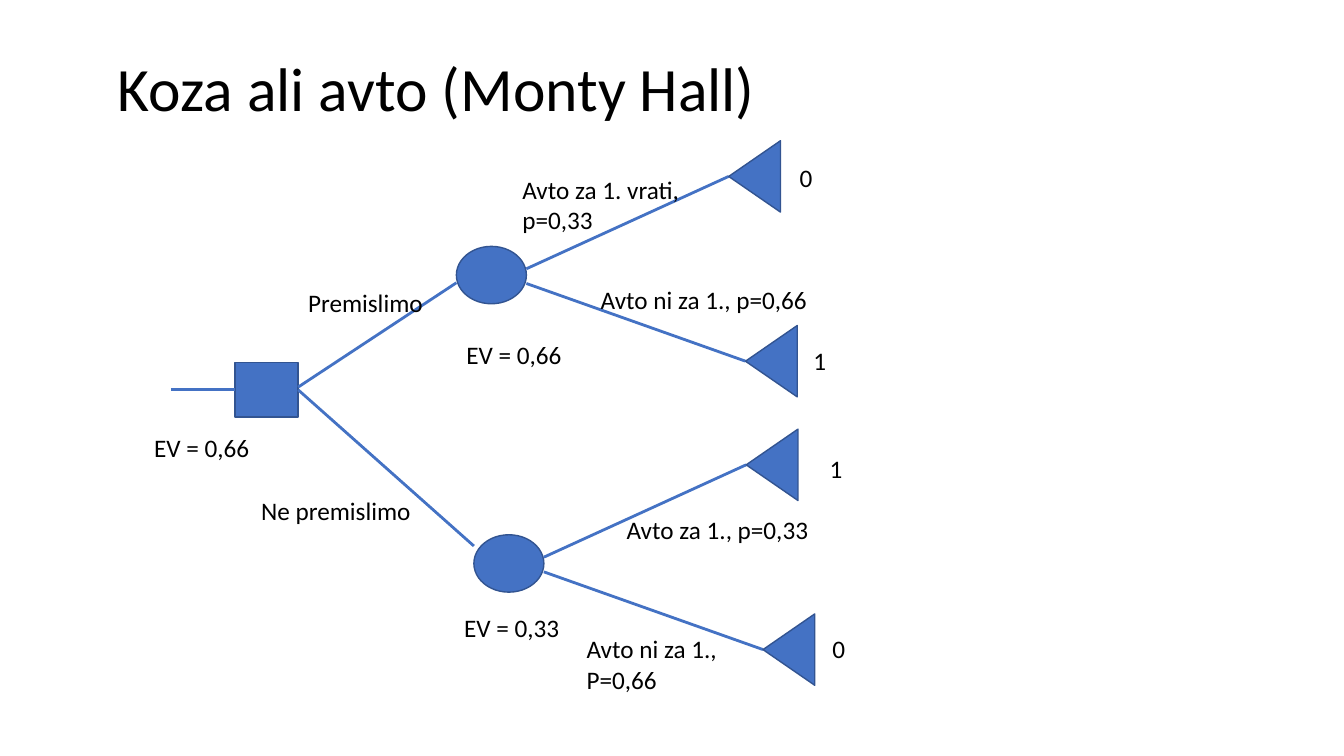
from pptx import Presentation
from pptx.dml.color import RGBColor
from pptx.enum.shapes import MSO_CONNECTOR, MSO_SHAPE
from pptx.enum.text import MSO_ANCHOR, MSO_AUTO_SIZE, PP_ALIGN
from pptx.oxml.ns import qn
from pptx.util import Pt
from lxml import etree

BLUE = RGBColor(0x44, 0x72, 0xC4)
DARK_BLUE = RGBColor(0x32, 0x54, 0x91)
BLACK = RGBColor(0, 0, 0)
STRAIGHT = MSO_CONNECTOR.STRAIGHT
RECT, OVAL, TRIANGLE = MSO_SHAPE.RECTANGLE, MSO_SHAPE.OVAL, MSO_SHAPE.ISOSCELES_TRIANGLE
LEFT, MIDDLE = PP_ALIGN.LEFT, MSO_ANCHOR.MIDDLE
FIT_SHAPE, NO_FIT = MSO_AUTO_SIZE.SHAPE_TO_FIT_TEXT, MSO_AUTO_SIZE.NONE

LEFT_SIDE, RIGHT_SIDE = 1, 3
CHANCE_W, CHANCE_H = 50, 41
PAYOFF_BASE, PAYOFF_H = 51, 37
# Start and end of both outcome branches, relative to the chance node
OUTCOME_LINES = [((50, 16), (194.5, -50)), ((50, 26.5), (206.5, 82))]


def format_font(p, size):
    for name, value in {"name": "Calibri", "size": Pt(size)}.items():
        setattr(p.font, name, value)
    p.font.color.rgb = BLACK


def add_title(s, text, x, y, w, h):
    title = s.shapes.title
    for name, value in {"left": x, "top": y, "width": w, "height": h}.items():
        setattr(title, name, Pt(value))
    tf = title.text_frame
    tf.text = text
    for name, value in {"auto_size": NO_FIT, "vertical_anchor": MIDDLE}.items():
        setattr(tf, name, value)
    p = tf.paragraphs[0]
    for name, value in {"alignment": LEFT, "line_spacing": 0.9}.items():
        setattr(p, name, value)
    format_font(p, 44)


def add_label(s, text, x, y, w, h=29):
    tf = s.shapes.add_textbox(Pt(x), Pt(y), Pt(w), Pt(h)).text_frame
    for name, value in {"word_wrap": False, "auto_size": FIT_SHAPE}.items():
        setattr(tf, name, value)
    tf.text = text
    for p in tf.paragraphs:
        format_font(p, 18)


def add_node(s, kind, x, y, w, h):
    sp = s.shapes.add_shape(kind, Pt(x), Pt(y), Pt(w), Pt(h))
    sp.shadow.inherit = False
    sp.fill.solid()
    sp.fill.fore_color.rgb = BLUE
    sp.line.color.rgb = DARK_BLUE
    sp.line.width = Pt(1)
    return sp


def add_branch(s, x1, y1, x2, y2):
    line = s.shapes.add_connector(STRAIGHT, Pt(x1), Pt(y1), Pt(x2), Pt(y2))
    line.line.color.rgb = BLUE
    line.line.width = Pt(2)
    etree.SubElement(line._element.spPr, qn("a:effectLst"))
    return line


def add_payoff(s, x, y):
    """Draw an end triangle whose tip points left at (x, y)."""
    left = x + PAYOFF_H / 2 - PAYOFF_BASE / 2
    sp = add_node(s, TRIANGLE, left, y - PAYOFF_H / 2, PAYOFF_BASE, PAYOFF_H)
    sp.rotation = 270


def add_decision(s, x, y, w, h):
    """Draw the square, its entry line and the branches to both choices."""
    mid = y + h / 2
    square = add_node(s, RECT, x, y, w, h)
    add_branch(s, x - 46, mid, x, mid).end_connect(square, LEFT_SIDE)
    add_branch(s, x + w, mid - 2, x + 158, y - 57)
    add_branch(s, x + w, mid, x + 170.5, y + 131).begin_connect(square, RIGHT_SIDE)
    add_label(s, "Premislimo", x + w, y - 57, 97)
    add_label(s, "Ne premislimo", x + 11.5, y + 91.5, 122.5)
    add_label(s, "EV = 0,66", x - 65, y + 46, 83.5)


def add_chance(s, x, y, labels):
    """Draw a chance node with two outcomes; labels hold text and offset box."""
    add_node(s, OVAL, x, y, CHANCE_W, CHANCE_H)
    for (x1, y1), (x2, y2) in OUTCOME_LINES:
        add_branch(s, x + x1, y + y1, x + x2, y + y2)
        add_payoff(s, x + x2, y + y2)
    for text, dx, dy, *size in labels:
        add_label(s, text, x + dx, y + dy, *size)


def main():
    prs = Presentation()
    prs.slide_width, prs.slide_height = Pt(960), Pt(540)
    s = prs.slides.add_slide(prs.slide_layouts[5])
    add_title(s, "Koza ali avto (Monty Hall)", 77, 13.5, 828, 104.5)
    add_decision(s, 168, 259, 45, 39)
    add_chance(s, 326, 176, [
        ("Avto za 1. vrati, \vp=0,33", 40, -55, 132, 51),
        ("Avto ni za 1., p=0,66", 96, 23.5, 163.5),
        ("EV = 0,66", 0, 63, 83.5),
        ("0", 238, -63.5, 24),
        ("1", 248, 67, 24),
    ])
    add_chance(s, 338.5, 382, [
        ("Avto za 1., p=0,33", 102, -18.5, 145.5),
        ("Avto ni za 1.,\nP=0,66", 73.5, 67, 108.5, 51),
        ("EV = 0,33", -14, 51.5, 83.5),
        ("1", 247, -61.5, 24),
        ("0", 249, 67, 24),
    ])
    prs.save("out.pptx")


if __name__ == "__main__":
    main()
